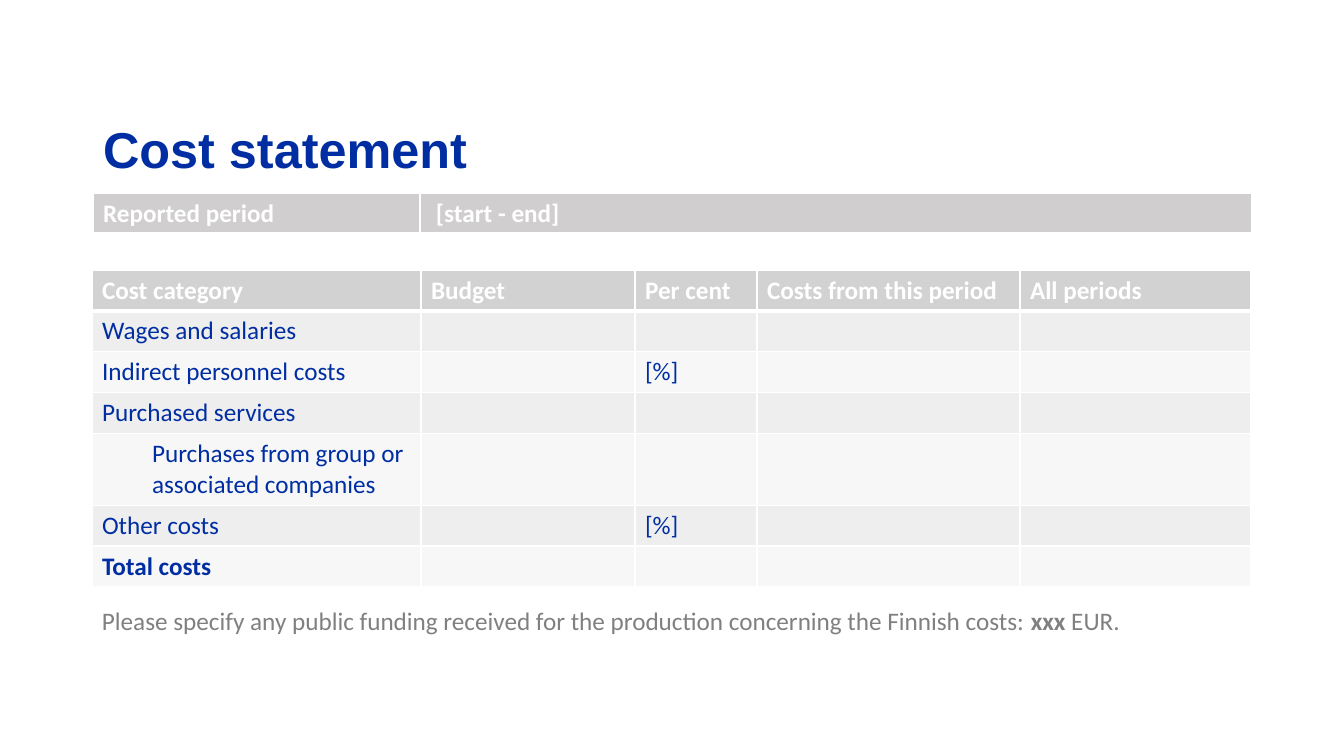
from dataclasses import dataclass

from lxml.etree import SubElement
from pptx import Presentation
from pptx.dml.color import RGBColor
from pptx.enum.text import MSO_ANCHOR, MSO_AUTO_SIZE, PP_ALIGN
from pptx.oxml.ns import qn
from pptx.util import Emu, Pt


@dataclass(frozen=True)
class Theme:
    blue: str = "002EA2"
    white: str = "FFFFFF"
    note: str = "808080"
    period: str = "D0CECE"
    header: str = "D2D2D2"
    bands: tuple = ("EEEEEE", "F7F7F7")
    title_font: str = "Arial"
    body_font: str = "Calibri"
    title_size: int = 36
    body_size: int = 18


T = Theme()

COST_HEADS = ["Cost category", "Budget", "Per cent", "Costs from this period", "All periods"]
COST_ROWS = [
    ["Wages and salaries"],
    ["Indirect personnel costs", "", "[%]"],
    ["Purchased services"],
    ["Purchases from group or associated companies"],
    ["Other costs", "", "[%]"],
    ["Total costs"],
]
SUB_ROW, TOTAL_ROW = 4, 6


def px(n):
    return Emu(round(n * 914400 / 100.8))


def add_run(p, text, color, bold=False, font=T.body_font, size=T.body_size):
    r = p.add_run()
    r.text = text
    r.font.name = font
    r.font.size = Pt(size)
    r.font.bold = bold
    r.font.color.rgb = RGBColor.from_string(color)


def style_cell(cell, fill, top=1, bottom=1):
    """Give the cell white borders, in points, and a solid fill."""
    tcPr = cell._tc.get_or_add_tcPr()
    for side, width in (("L", 1), ("R", 1), ("T", top), ("B", bottom)):
        ln = SubElement(tcPr, qn(f"a:ln{side}"), w=str(Pt(width)))
        SubElement(SubElement(ln, qn("a:solidFill")), qn("a:srgbClr"), val=T.white)
    cell.fill.solid()
    cell.fill.fore_color.rgb = RGBColor.from_string(fill)


def add_grid(s, x, y, widths, heights):
    frame = s.shapes.add_table(len(heights), len(widths), px(x), px(y),
                               px(sum(widths)), px(sum(heights)))
    table = frame.table
    table.first_row = table.horz_banding = False
    for column, width in zip(table.columns, widths):
        column.width = px(width)
    for row, height in zip(table.rows, heights):
        row.height = px(height)
    return table


def add_title(s, x, y, w, h):
    sp = s.shapes.title
    sp.left, sp.top, sp.width, sp.height = px(x), px(y), px(w), px(h)
    tf = sp.text_frame
    tf.auto_size = MSO_AUTO_SIZE.NONE
    tf.vertical_anchor = MSO_ANCHOR.MIDDLE
    p = tf.paragraphs[0]
    p.alignment = PP_ALIGN.LEFT
    p.line_spacing = 0.8
    add_run(p, "Cost statement", T.blue, True, T.title_font, T.title_size)


def add_cost_table(s, x, y):
    heights = [71 if i == SUB_ROW else 40 for i in range(len(COST_ROWS) + 1)]
    table = add_grid(s, x, y, [329, 214, 122, 263, 231], heights)
    for i, texts in enumerate([COST_HEADS] + COST_ROWS):
        head = i == 0
        fill = T.header if head else T.bands[(i - 1) % 2]
        for j in range(len(COST_HEADS)):
            cell = table.cell(i, j)
            style_cell(cell, fill, top=3 if i == 1 else 1, bottom=3 if head else 1)
            if j < len(texts) and texts[j]:
                add_run(cell.text_frame.paragraphs[0], texts[j],
                        T.white if head else T.blue, head or i == TOTAL_ROW)
    p = table.cell(SUB_ROW, 0).text_frame.paragraphs[0]
    p.level = 1
    p._p.get_or_add_pPr().set("marL", str(px(50)))


def add_period_table(s, x, y):
    table = add_grid(s, x, y, [327, 832], [41])
    for j, text in enumerate(["Reported period", "[start - end]"]):
        cell = table.cell(0, j)
        style_cell(cell, T.period, bottom=3)
        add_run(cell.text_frame.paragraphs[0], text, T.white, True)
    table.cell(0, 1).margin_left = px(16)


def add_funding_note(s, x, y, w, h):
    tf = s.shapes.add_textbox(px(x), px(y), px(w), px(h)).text_frame
    tf.word_wrap = False
    tf.auto_size = MSO_AUTO_SIZE.SHAPE_TO_FIT_TEXT
    p = tf.paragraphs[0]
    add_run(p, "Please specify any public funding received for the production "
               "concerning the Finnish costs: ", T.note)
    add_run(p, "xxx", T.note, True)
    add_run(p, " EUR.", T.note)


def main():
    prs = Presentation()
    prs.slide_width, prs.slide_height = px(1344), px(756)
    s = prs.slides.add_slide(prs.slide_layouts[5])
    add_title(s, 93, 116, 1159, 77)
    add_cost_table(s, 92, 270)
    add_period_table(s, 93, 193)
    add_funding_note(s, 92, 600, 1059, 40)
    prs.save("out.pptx")


if __name__ == "__main__":
    main()
